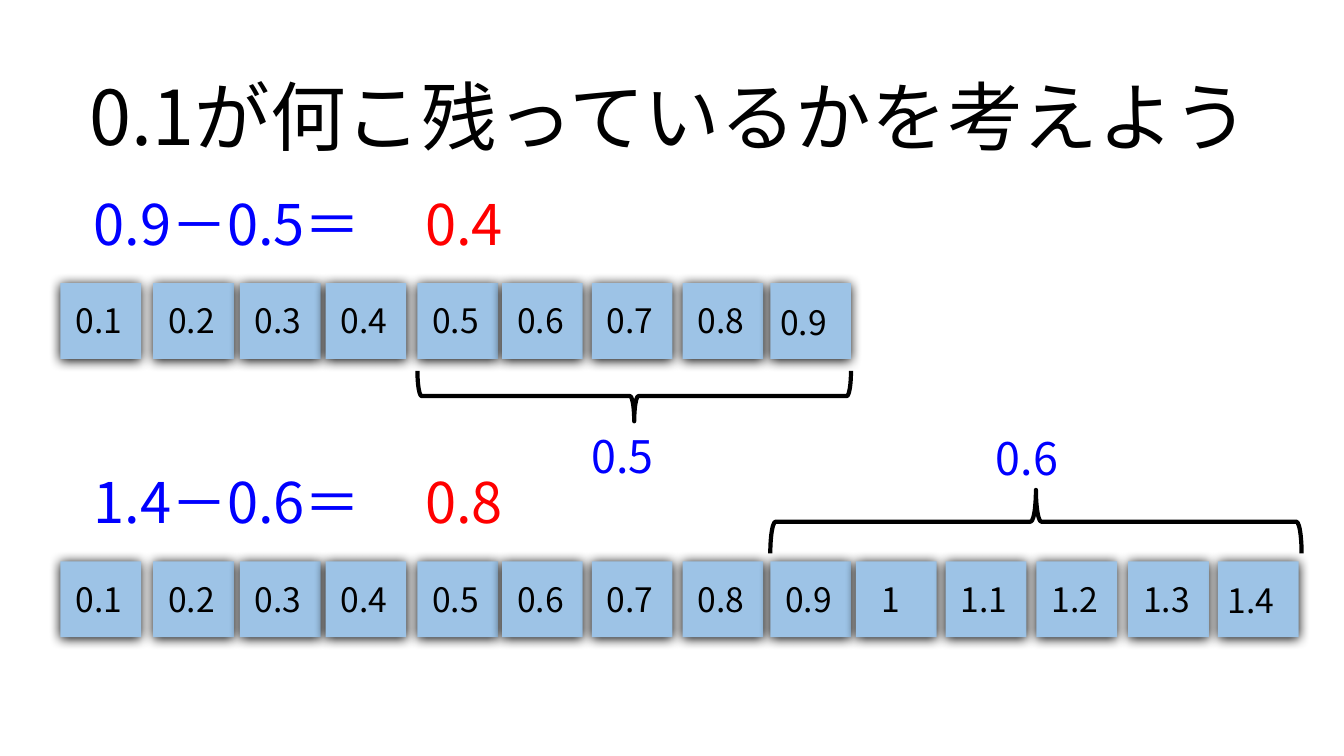
"""Build a slide that shows decimal subtraction with rows of 0.1 tiles."""
from dataclasses import dataclass

from lxml.etree import SubElement as Sub
from pptx import Presentation
from pptx.dml.color import RGBColor as Rgb
from pptx.enum.shapes import MSO_SHAPE as Kind
from pptx.enum.text import MSO_ANCHOR as Anchor, MSO_AUTO_SIZE as Fit, PP_ALIGN as Align
from pptx.oxml.ns import qn
from pptx.util import Inches, Pt


@dataclass(frozen=True)
class Theme:
    face: str = "Noto Sans CJK JP"
    ink: Rgb = Rgb(0, 0, 0)
    paper: Rgb = Rgb(255, 255, 255)
    tile: Rgb = Rgb(0x9D, 0xC3, 0xE6)
    ask: Rgb = Rgb(0, 0, 255)
    reply: Rgb = Rgb(255, 0, 0)
    head: int = 54
    sum: int = 40
    taken: int = 32
    label: int = 24
    rule: int = 3


look = Theme()
deck = Presentation()
deck.slide_width, deck.slide_height = Inches(13.33), Inches(7.5)
cell = deck.slide_height // 750
slide = deck.slides.add_slide(deck.slide_layouts[5])
shapes = slide.shapes


def write(shape, text, size, color):
    frame = shape.text_frame
    frame.word_wrap = True
    frame.auto_size = Fit.NONE
    frame.vertical_anchor = Anchor.TOP
    frame.text = text
    para = frame.paragraphs[0]
    para.alignment = Align.LEFT
    font = para.font
    font.size, font.name = Pt(size), look.face
    font.color.rgb = color
    Sub(font._element, qn("a:ea"), typeface=look.face)


def draw(kind, box, fill=None):
    shape = shapes.add_shape(kind, *[n * cell for n in box])
    shape.shadow.inherit = False
    shape.line.fill.background()
    if fill is None:
        shape.fill.background()
    else:
        shape.fill.solid()
        shape.fill.fore_color.rgb = fill
    return shape


title = shapes.title
title.left, title.top, title.width, title.height = [n * cell for n in (79, 64, 1236, 101)]
write(title, "0.1が何こ残っているかを考えよう", look.head, look.ink)

cols = (60, 152, 238, 323, 414, 498, 587, 677, 764, 849, 938, 1028, 1119, 1208)
sums = (
    (183, 9, "0.9－0.5＝", "0.4", 14),
    (459, 14, "1.4－0.6＝", "0.8", 13),
)
for top, count, ask, reply, drop in sums:
    for left, wide, text, color in ((83, 331, ask, look.ask), (412, 132, reply, look.reply)):
        box = shapes.add_textbox(left * cell, top * cell, wide * cell, 77 * cell)
        write(box, text, look.sum, color)

    row = top + 98
    for step, left in enumerate(cols[:count], 1):
        tile = draw(Kind.RECTANGLE, (left, row, 80, 75), look.tile)
        glow = Sub(tile._element.spPr.find(qn("a:effectLst")), qn("a:outerShdw"),
                   blurRad=str(Pt(8.5)), dist=str(Pt(1)), dir="5400000",
                   algn="t", rotWithShape="0")
        Sub(glow, qn("a:srgbClr"), val=str(look.ink))

        last, whole = step == count, step == 10
        shift = 0 if last else 15 if whole else 5
        fall = drop if last else 12
        wide = 44 if whole else 80
        label = shapes.add_textbox((left + shift) * cell, (row + fall) * cell,
                                   wide * cell, 50 * cell)
        write(label, f"{step / 10:g}", look.label, look.ink)

spans = (
    ("0.5", (577, 420, 100, 64), (604, 178, 50, 430), 90),
    ("0.6", (978, 422, 100, 64), (996, 254, 63, 527), 270),
)
for text, spot, span, turn in spans:
    write(draw(Kind.RECTANGLE, spot, look.paper), text, look.taken, look.ask)
    brace = draw(Kind.RIGHT_BRACE, span)
    brace.rotation = turn
    brace.line.color.rgb = look.ink
    brace.line.width = Pt(look.rule)

deck.save("out.pptx")
